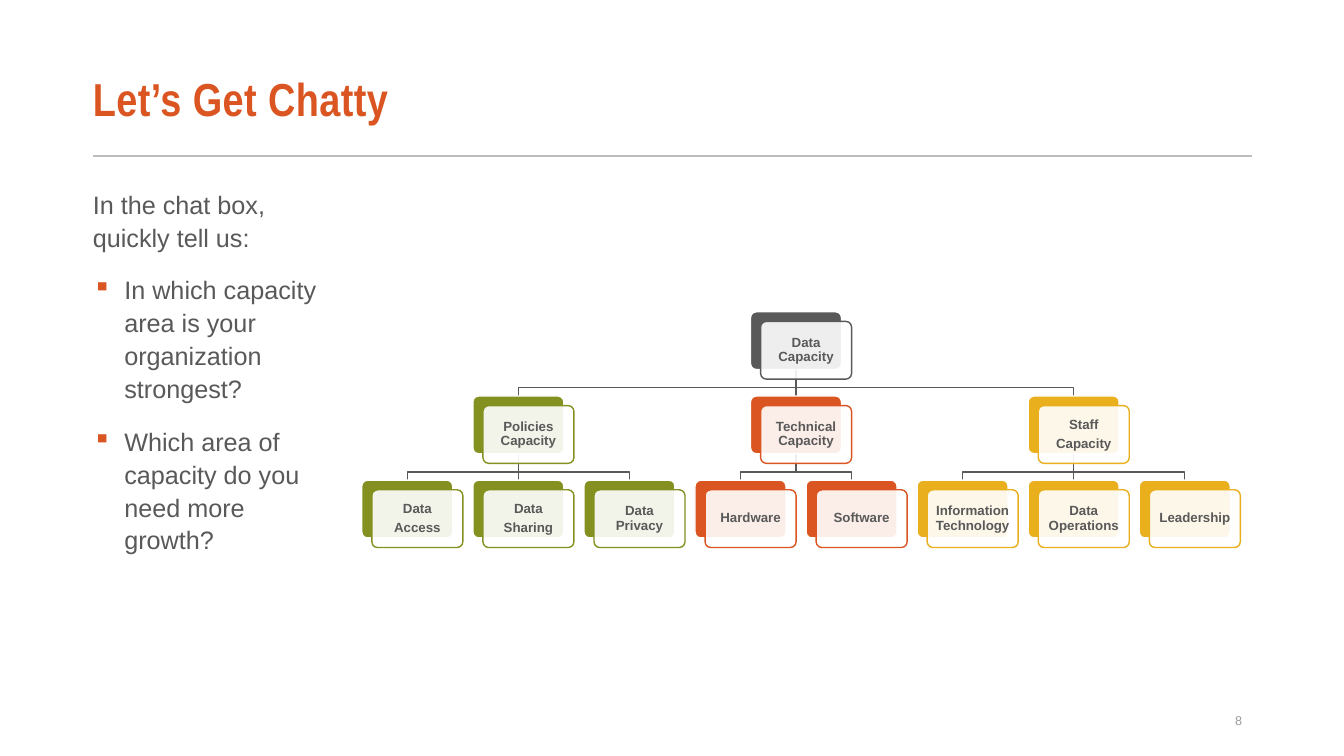
"""Builds the slide with the capacity question and the data capacity tree."""
from dataclasses import dataclass, field
from itertools import count
from typing import Iterator

from lxml.etree import SubElement
from pptx import Presentation
from pptx.dml.color import RGBColor
from pptx.enum.shapes import MSO_CONNECTOR as Connector, MSO_SHAPE as Shape
from pptx.enum.text import MSO_ANCHOR as Anchor, PP_ALIGN as Align
from pptx.oxml.ns import qn
from pptx.util import Pt

WHITE = RGBColor(0xFF, 0xFF, 0xFF)
GRAY = RGBColor(0x59, 0x59, 0x59)
RULE_GRAY = RGBColor(0xBD, 0xBD, 0xBD)
NUMBER_GRAY = RGBColor(0x9B, 0x9B, 0x9B)
GREEN = RGBColor(0x84, 0x91, 0x20)
ORANGE = RGBColor(0xDA, 0x55, 0x21)
GOLD = RGBColor(0xE9, 0xAF, 0x1D)

TREE_LEFT, TREE_TOP = 258.4, 222.7
COLUMN_STEP, LEVEL_STEP = 79.34, 60.15
CARD_WIDTH, CARD_HEIGHT = 65, 41.25
FRONT_DX, FRONT_DY = 7.2, 6.85
BRANCH_DROP = 13


@dataclass
class Capacity:
    """One card of the tree with the cards below it."""
    lines: list[str]
    color: RGBColor
    children: list["Capacity"] = field(default_factory=list)
    line_gap: float = 3.3
    column: float = 0
    level: int = 0

    @property
    def left(self) -> float:
        return TREE_LEFT + self.column * COLUMN_STEP

    @property
    def top(self) -> float:
        return TREE_TOP + self.level * LEVEL_STEP

    @property
    def center(self) -> float:
        return self.left + CARD_WIDTH / 2

    @property
    def bottom(self) -> float:
        return self.top + CARD_HEIGHT


TREE = Capacity(["Data Capacity"], GRAY, [
    Capacity(["Policies Capacity"], GREEN, [
        Capacity(["Data", "Access"], GREEN),
        Capacity(["Data", "Sharing"], GREEN),
        Capacity(["Data", "Privacy"], GREEN, line_gap=0),
    ]),
    Capacity(["Technical Capacity"], ORANGE, [
        Capacity(["Hardware"], ORANGE),
        Capacity(["Software"], ORANGE),
    ]),
    Capacity(["Staff", "Capacity"], GOLD, [
        Capacity(["Information Technology"], GOLD),
        Capacity(["Data Operations"], GOLD),
        Capacity(["Leadership"], GOLD),
    ]),
])


def arrange(node: Capacity, leaf_columns: Iterator[int], level: int = 0) -> None:
    """Puts leaves in successive columns and parents midway above them."""
    node.level = level
    for child in node.children:
        arrange(child, leaf_columns, level + 1)
    if node.children:
        node.column = (node.children[0].column + node.children[-1].column) / 2
    else:
        node.column = next(leaf_columns)


def walk(node: Capacity) -> Iterator[Capacity]:
    """Yields a card and then all cards below it."""
    yield node
    for child in node.children:
        yield from walk(child)


def add_line(slide, x1: float, y1: float, x2: float, y2: float, color: RGBColor, width: float):
    """Draws a straight line without shadow."""
    line = slide.shapes.add_connector(Connector.STRAIGHT, Pt(x1), Pt(y1), Pt(x2), Pt(y2))
    line.line.color.rgb = color
    line.line.width = Pt(width)
    SubElement(line.element.spPr, qn("a:effectLst"))
    return line


def add_elbow(slide, parent: Capacity, child: Capacity) -> None:
    """Draws the bent branch from a parent to a child beside its axis."""
    bend = parent.bottom + BRANCH_DROP
    corners = [(parent.center, bend), (child.center, bend), (child.center, child.top)]
    builder = slide.shapes.build_freeform(Pt(parent.center), Pt(parent.bottom))
    builder.add_line_segments([(Pt(x), Pt(y)) for x, y in corners], close=False)
    branch = builder.convert_to_shape()
    branch.fill.background()
    branch.line.color.rgb = GRAY
    branch.line.width = Pt(1)
    branch.shadow.inherit = False


def add_plate(slide, left: float, top: float, fill: RGBColor, outline: RGBColor):
    """Draws one rounded plate of a card."""
    plate = slide.shapes.add_shape(
        Shape.ROUNDED_RECTANGLE, Pt(left), Pt(top), Pt(CARD_WIDTH), Pt(CARD_HEIGHT))
    plate.adjustments[0] = 0.1
    plate.fill.solid()
    plate.fill.fore_color.rgb = fill
    plate.line.color.rgb = outline
    plate.line.width = Pt(1)
    plate.shadow.inherit = False
    return plate


def set_font(paragraph, name: str, size: float, color: RGBColor, bold: bool = False) -> None:
    """Sets the font of a whole paragraph."""
    paragraph.font.name = name
    paragraph.font.size = Pt(size)
    paragraph.font.color.rgb = color
    paragraph.font.bold = bold


def add_card(slide, node: Capacity):
    """Draws a card and returns its back plate."""
    back = add_plate(slide, node.left, node.top, node.color, WHITE)
    front = add_plate(slide, node.left + FRONT_DX, node.top + FRONT_DY, WHITE, node.color)
    white = front.element.spPr.find(qn("a:solidFill"))[0]
    SubElement(white, qn("a:alpha"), val="90000")
    frame = front.text_frame
    frame.word_wrap = True
    frame.vertical_anchor = Anchor.MIDDLE
    frame.margin_left = frame.margin_right = frame.margin_top = frame.margin_bottom = Pt(2.9)
    frame.text = "\n".join(node.lines)
    for paragraph in frame.paragraphs:
        paragraph.alignment = Align.CENTER
        paragraph.line_spacing = 0.9
        paragraph.space_after = Pt(node.line_gap)
        set_font(paragraph, "Arial", 9.5, GRAY, bold=True)
    return back


def add_tree(slide, root: Capacity) -> None:
    """Draws the branches, then the cards over them."""
    arrange(root, count())
    nodes = list(walk(root))
    straight = []
    for parent in nodes:
        for child in parent.children:
            if child.column == parent.column:
                stem = add_line(slide, parent.center, parent.bottom,
                                child.center, child.top, GRAY, 1)
                straight.append((stem, parent, child))
            else:
                add_elbow(slide, parent, child)
    backs = {id(node): add_card(slide, node) for node in nodes}
    for stem, parent, child in straight:
        stem.begin_connect(backs[id(parent)], 2)
        stem.end_connect(backs[id(child)], 0)


def add_text(slide, left: float, top: float, width: float, height: float,
             text: str, anchor: Anchor = Anchor.MIDDLE):
    """Adds a wrapping text box and returns its text frame."""
    frame = slide.shapes.add_textbox(Pt(left), Pt(top), Pt(width), Pt(height)).text_frame
    frame.word_wrap = True
    frame.vertical_anchor = anchor
    frame.margin_left = 0
    frame.text = text
    return frame


def add_bullet(paragraph) -> None:
    """Gives a paragraph an orange square bullet and a hanging indent."""
    properties = paragraph._p.get_or_add_pPr()
    properties.set("marL", str(Pt(22.5)))
    properties.set("indent", str(Pt(-22.5)))
    bullet_color = SubElement(properties, qn("a:buClr"))
    SubElement(bullet_color, qn("a:srgbClr"), val=str(ORANGE))
    SubElement(properties, qn("a:buChar"), char="▪")


def main() -> None:
    """Builds and saves the slide."""
    deck = Presentation()
    deck.slide_width, deck.slide_height = Pt(960), Pt(540)
    slide = deck.slides.add_slide(deck.slide_layouts[6])

    add_line(slide, 66.3, 111.2, 894.3, 111.2, RULE_GRAY, 1.5)

    title = add_text(slide, 66.3, 39, 828, 67.5, "Let’s Get Chatty").paragraphs[0]
    title.line_spacing = 0.87
    set_font(title, "Arial Narrow", 33, ORANGE, bold=True)
    title.runs[0]._r.get_or_add_rPr().set("spc", "30")

    prompt = add_text(slide, 66.3, 129.6, 178.6, 286, "\n".join([
        "In the chat box, quickly tell us:",
        "In which capacity area is your organization strongest?",
        "Which area of capacity do you need more growth?",
    ]), Anchor.TOP)
    for index, paragraph in enumerate(prompt.paragraphs):
        if index:
            add_bullet(paragraph)
            paragraph.space_before = Pt(14)
        paragraph.line_spacing = 1.09
        set_font(paragraph, "Arial", 18, GRAY)

    page_number = add_text(slide, 678.3, 500.4, 216, 28.8, "8").paragraphs[0]
    page_number.alignment = Align.RIGHT
    set_font(page_number, "Arial", 9, NUMBER_GRAY)

    add_tree(slide, TREE)
    deck.save("out.pptx")


if __name__ == "__main__":
    main()
